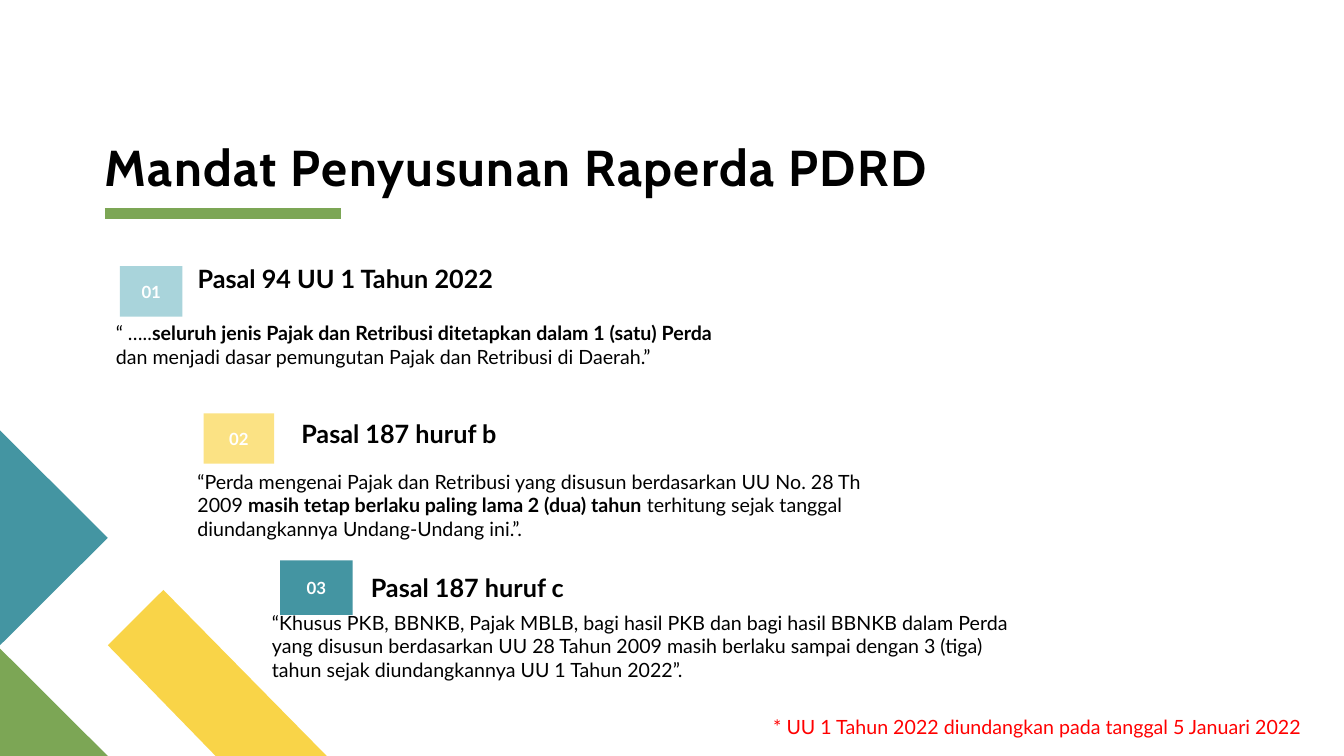
from lxml import etree
from pptx import Presentation
from pptx import util as u
from pptx.dml.color import RGBColor
from pptx.enum import shapes, text
from pptx.oxml.ns import qn

WIDE, HIGH = u.Inches(13.33), u.Inches(7.5)
TEAL, GREEN, GOLD = "4495A2", "7CA655", "F9D448"

ITEMS = [
    dict(box=(7.88, 34.13, 46.74, 15.33), tile=(1.05, 1.07, 4.65, 6.67),
         head=(6.08, 0), drop=7.73, num="01", fill="A9D4DB",
         name="Pasal 94 UU 1 Tahun 2022",
         body=[("“ …..", False),
               ("seluruh jenis Pajak dan Retribusi ditetapkan dalam 1 (satu) Perda ", True),
               ("dan menjadi dasar pemungutan Pajak dan Retribusi di Daerah.”", False)]),
    dict(box=(13.95, 54.67, 54.24, 17.6), tile=(1.2, 0, 5.25, 6.67),
         head=(7.73, 0), drop=6.8, num="02", fill="FBE284",
         name="Pasal 187 huruf b",
         body=[("“Perda mengenai Pajak dan Retribusi yang disusun berdasarkan "
                "UU No. 28 Th 2009 ", False),
               ("masih tetap berlaku paling lama 2 (dua) tahun ", True),
               ("terhitung sejak tanggal diundangkannya Undang-Undang ini.”.", False)]),
    dict(box=(19.5, 74.13, 57.76, 16.8), tile=(1.35, 0, 5.4, 7.2),
         head=(7.35, 0.93), drop=6, num="03", fill=TEAL,
         name="Pasal 187 huruf c",
         body=[("“Khusus PKB, BBNKB, Pajak MBLB, bagi hasil PKB dan bagi hasil BBNKB "
                "dalam Perda yang disusun berdasarkan UU 28 Tahun 2009 masih berlaku "
                "sampai dengan 3 (tiga) tahun sejak diundangkannya UU 1 Tahun 2022”.", False)]),
]


def color(code):
    """Turn a hex string into a colour."""
    return RGBColor.from_string(code)


def col(n):
    """Give the length of n hundredths of the slide's width."""
    return u.Emu(round(WIDE * n / 100))


def row(n):
    """Give the length of n hundredths of the slide's height."""
    return u.Emu(round(HIGH * n / 100))


def place(box):
    """Turn a box in columns and rows into lengths."""
    x, y, w, h = box
    return col(x), row(y), col(w), row(h)


def paint(shape, fill):
    """Give a shape a plain fill without line or shadow."""
    shape.shadow.inherit = False
    shape.fill.solid()
    shape.fill.fore_color.rgb = color(fill)
    shape.line.fill.background()


def write(shape, runs, size=14, font="Lato", ink="000000", align="LEFT",
          anchor="TOP", inset=None, space=None, track=None):
    """Write (text, bold) runs into a shape."""
    frame = shape.text_frame
    frame.word_wrap = True
    frame.auto_size = text.MSO_AUTO_SIZE.NONE
    frame.vertical_anchor = text.MSO_ANCHOR[anchor]
    if inset is not None:
        frame.margin_left = frame.margin_right = inset
        frame.margin_top = frame.margin_bottom = inset
    para = frame.paragraphs[0]
    para.alignment = text.PP_ALIGN[align]
    if space:
        para.line_spacing = space
    for words, bold in runs:
        run = para.add_run()
        run.text = words
        run.font.name, run.font.size, run.font.bold = font, u.Pt(size), bold
        run.font.color.rgb = color(ink)
        if track:
            run._r.get_or_add_rPr().set("spc", str(track))


def label(slide, box, runs, **style):
    """Add a text box."""
    write(slide.shapes.add_textbox(*place(box)), runs, **style)


def corner(slide, box):
    """Draw the corner shapes from points given as shares of the box."""
    x, y, w, h = box
    forms = [
        (GOLD, [(1, 1), (0.66, 1), (0.33, 0.66), (0.5, 0.49)]),
        (GREEN, [(0, 0.67), (0.33, 1), (0, 1)]),
        (TEAL, [(0, 0), (0.33, 0.33), (0, 0.66)]),
    ]
    for fill, pts in forms:
        pts = [(col(x + w * a), row(y + h * b)) for a, b in pts]
        pen = slide.shapes.build_freeform(*pts[0])
        pen.add_line_segments(pts[1:], close=True)
        paint(pen.convert_to_shape(), fill)


def header(slide, box):
    """Set the title and the rule below it."""
    x, y, w, h = box
    title = slide.shapes.title
    title.left, title.top, title.width, title.height = place(box)
    write(title, [("Mandat Penyusunan Raperda PDRD", True)], size=36, font="Cabin",
          anchor="BOTTOM", inset=0, space=0.9, track=100)
    base = row(y + h + 2.14)
    rule = slide.shapes.add_connector(shapes.MSO_CONNECTOR.STRAIGHT,
                                      col(x), base, col(x + 17.56), base)
    rule.line.color.rgb = color(GREEN)
    rule.line.width = u.Pt(8)
    etree.SubElement(rule._element.spPr, qn("a:effectLst"))


def article(slide, box, tile, head, drop, num, fill, name, body):
    """Add one article: quote, numbered tile and heading."""
    x, y, w, h = box
    label(slide, (x, y + drop, w, h - drop), body)
    dx, dy, tw, th = tile
    block = slide.shapes.add_shape(shapes.MSO_SHAPE.RECTANGLE,
                                   *place((x + dx, y + dy, tw, th)))
    paint(block, fill)
    write(block, [(num, True)], size=12, ink="FFFFFF", align="CENTER", anchor="MIDDLE")
    label(slide, (x + head[0], y + head[1], 27.76, 5.33), [(name, True)], size=18)


def main():
    """Build and save the slide."""
    deck = Presentation()
    deck.slide_width, deck.slide_height = WIDE, HIGH
    slide = deck.slides.add_slide(deck.slide_layouts[5])
    corner(slide, (0, 56.93, 24.31, 43.07))
    header(slide, (7.8, 17.2, 81.85, 8.93))
    for item in ITEMS:
        article(slide, **item)
    label(slide, (56.79, 93.87, 41.79, 4.53),
          [("* UU 1 Tahun 2022 diundangkan pada tanggal 5 Januari 2022", False)],
          ink="FF0000")
    deck.save("out.pptx")


if __name__ == "__main__":
    main()
